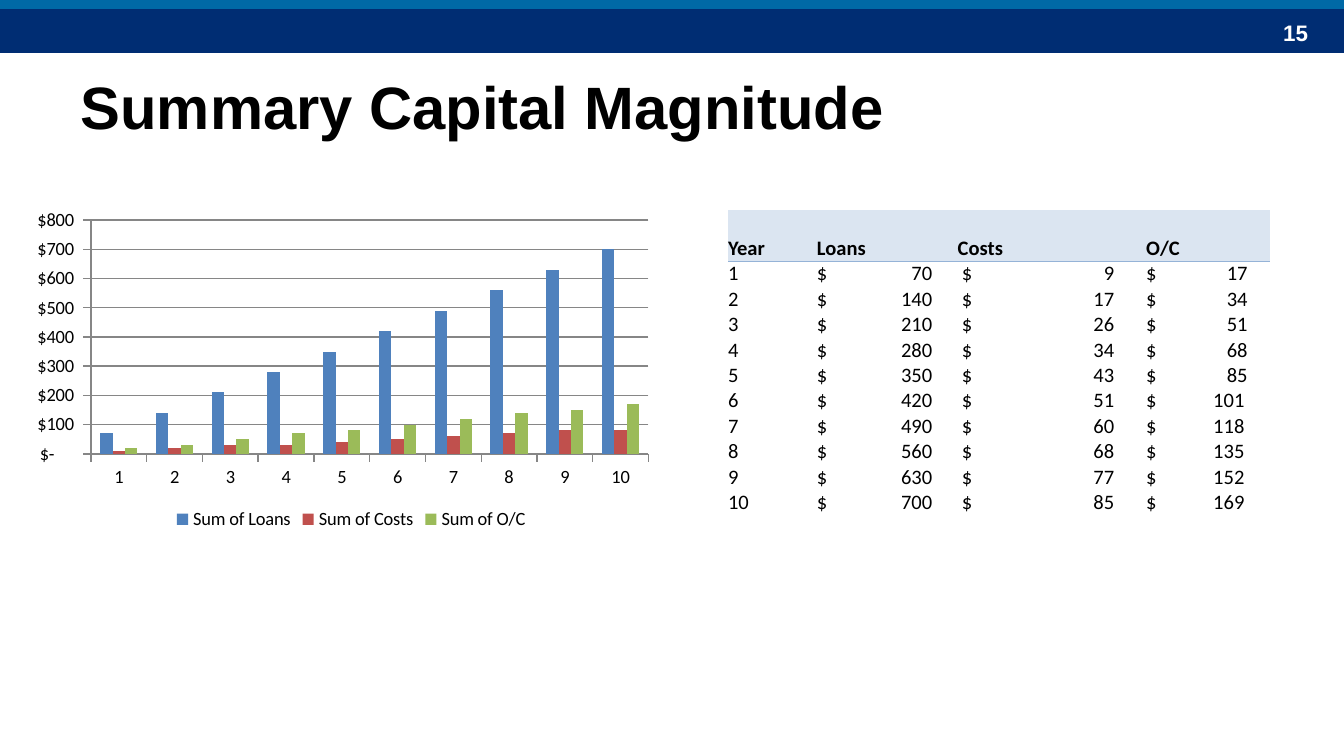
from lxml.etree import SubElement
from pptx import Presentation
from pptx.chart.data import CategoryChartData
from pptx.dml.color import RGBColor
from pptx.enum.chart import XL_CHART_TYPE as ChartType, XL_LEGEND_POSITION as LegendPosition, XL_TICK_MARK as TickMark
from pptx.enum.shapes import MSO_SHAPE as ShapeType
from pptx.enum.text import MSO_ANCHOR as Anchor, PP_ALIGN as Align
from pptx.oxml import parse_xml
from pptx.oxml.ns import nsdecls, qn
from pptx.util import Cm, Pt

YEARS = range(1, 11)
AMOUNTS = {
    "Loans": [70, 140, 210, 280, 350, 420, 490, 560, 630, 700],
    "Costs": [9, 17, 26, 34, 43, 51, 60, 68, 77, 85],
    "O/C": [17, 34, 51, 68, 85, 101, 118, 135, 152, 169],
}
SERIES_COLORS = ["4F81BD", "C0504D", "9BBB59"]
COLUMN_WIDTHS = [1.6, 2.74, 3.48, 2.42]
AMOUNT_TABS = {"Loans": 2.18, "Costs": 2.88, "O/C": 1.92}
WIDE_OC_TAB = 1.86
ROW_HEIGHT = 0.48
INDENT = 0.08
NO_STYLE = "{2D5ABB26-0587-4C30-8999-92F81FD0307C}"
DOLLARS = '_("$"* #,##0_);_("$"* \\(#,##0\\);_("$"* "-"??_);_(@_)'

TITLE_FONT = {"name": "Arial", "size": Pt(32), "bold": True}
NUMBER_FONT = {"name": "Arial", "size": Pt(12), "bold": True}
HEADER_FONT = {"name": "Calibri", "size": Pt(11), "bold": True}
BODY_FONT = {**HEADER_FONT, "bold": False}
CHART_FONT = {"name": "Calibri", "size": Pt(10)}


def rgb(color):
    return RGBColor.from_string(color)


def apply_format(target, values):
    for name, value in values.items():
        setattr(target, name, value)


def format_font(font, values, color="000000"):
    apply_format(font, values)
    font.color.rgb = rgb(color)


def place(shape, left, top, width, height):
    box = {"left": left, "top": top, "width": width, "height": height}
    apply_format(shape, {name: Cm(value) for name, value in box.items()})


def add_band(slide, top, height, color):
    band = slide.shapes.add_shape(ShapeType.RECTANGLE, 0, Cm(top), Cm(25.4), Cm(height))
    band.shadow.inherit = False
    band.fill.solid()
    band.fill.fore_color.rgb = rgb(color)
    band.line.fill.background()


def add_slide_number(slide, number):
    box = slide.shapes.add_textbox(Cm(23.07), Cm(0.24), Cm(1.9), Cm(0.76))
    box.text_frame.word_wrap = True
    paragraph = box.text_frame.paragraphs[0]
    paragraph.alignment = Align.RIGHT
    run = paragraph.add_run()
    run.text = number
    format_font(run.font, NUMBER_FONT, "FFFFFF")


def set_title(slide, text):
    title = slide.shapes.title
    place(title, 1.27, 1.08, 22.86, 1.83)
    frame = title.text_frame
    apply_format(frame, {"text": text, "vertical_anchor": Anchor.MIDDLE, "word_wrap": True})
    paragraph = frame.paragraphs[0]
    paragraph.alignment = Align.LEFT
    format_font(paragraph.runs[0].font, TITLE_FONT)


def format_axis(axis):
    axis.major_tick_mark = TickMark.OUTSIDE
    axis.minor_tick_mark = TickMark.NONE
    axis.format.line.color.rgb = rgb("868686")
    format_font(axis.tick_labels.font, CHART_FONT)


def set_plot_area(chart, x, y, width, height):
    plot_area = chart._chartSpace.chart.plotArea
    for layout in plot_area.findall(qn("c:layout")):
        plot_area.remove(layout)
    layout = parse_xml(f"<c:layout {nsdecls('c')}><c:manualLayout/></c:layout>")
    settings = {"layoutTarget": "inner", "xMode": "edge", "yMode": "edge",
                "x": x, "y": y, "w": width, "h": height}
    for name, value in settings.items():
        SubElement(layout[0], qn(f"c:{name}")).set("val", str(value))
    plot_area.insert(0, layout)


def add_capital_chart(slide):
    data = CategoryChartData(number_format=DOLLARS)
    data.categories = [str(year) for year in YEARS]
    for name, amounts in AMOUNTS.items():
        data.add_series(f"Sum of {name}", [round(amount, -1) for amount in amounts])
    chart = slide.shapes.add_chart(
        ChartType.COLUMN_CLUSTERED, Cm(0.63), Cm(3.96), Cm(11.86), Cm(6.15), data).chart
    chart.has_title = False
    format_font(chart.font, CHART_FONT)
    chart.has_legend = True
    apply_format(chart.legend, {"position": LegendPosition.BOTTOM, "include_in_layout": False})
    format_font(chart.legend.font, CHART_FONT)
    plot = chart.plots[0]
    apply_format(plot, {"vary_by_categories": False, "gap_width": 150, "overlap": 0})
    for series, color in zip(plot.series, SERIES_COLORS):
        series.format.fill.solid()
        series.format.fill.fore_color.rgb = rgb(color)
    format_axis(chart.category_axis)
    axis = chart.value_axis
    format_axis(axis)
    apply_format(axis, {"minimum_scale": 0, "maximum_scale": 800, "major_unit": 100})
    axis.major_gridlines.format.line.color.rgb = rgb("868686")
    apply_format(axis.tick_labels, {"number_format": DOLLARS, "number_format_is_linked": False})
    set_plot_area(chart, 0.08, 0.03, 0.9, 0.72)


def add_bottom_border(cell):
    cell._tc.get_or_add_tcPr().insert(0, parse_xml(
        f'<a:lnB {nsdecls("a")} w="{Pt(0.5)}"><a:solidFill>'
        f'<a:srgbClr val="95B3D7"/></a:solidFill></a:lnB>'))


def fill_cell(cell, text, font, indent=0, tab=None, color=None):
    apply_format(cell, {"margin_left": Cm(indent), "margin_right": 0, "margin_top": 0,
                        "margin_bottom": 0, "vertical_anchor": Anchor.BOTTOM})
    paragraph = cell.text_frame.paragraphs[0]
    if tab:
        tabs = SubElement(paragraph._p.get_or_add_pPr(), qn("a:tabLst"))
        SubElement(tabs, qn("a:tab"), pos=str(Cm(tab)), algn="r")
    if text:
        run = paragraph.add_run()
        run.text = text
        format_font(run.font, font)
    else:
        SubElement(paragraph._p, qn("a:endParaRPr"), sz=str(int(font["size"].pt * 100)))
    if color:
        cell.fill.solid()
        cell.fill.fore_color.rgb = rgb(color)
    else:
        cell.fill.background()


def amount_tab(name, amount):
    return WIDE_OC_TAB if name == "O/C" and amount >= 100 else AMOUNT_TABS[name]


def add_capital_table(slide):
    row_count = len(YEARS) + 2
    table = slide.shapes.add_table(
        row_count, len(COLUMN_WIDTHS), Cm(13.76), Cm(3.97),
        Cm(sum(COLUMN_WIDTHS)), Cm(ROW_HEIGHT * row_count)).table
    apply_format(table, {"first_row": False, "horz_banding": False})
    table._tbl.tblPr.find(qn("a:tableStyleId")).text = NO_STYLE
    for column, width in zip(table.columns, COLUMN_WIDTHS):
        column.width = Cm(width)
    for row in table.rows:
        row.height = Cm(ROW_HEIGHT)
    for column, header in enumerate(["Year", *AMOUNTS]):
        indent = INDENT if header in ("Loans", "O/C") else 0
        fill_cell(table.cell(0, column), "", HEADER_FONT, color="DBE5F1")
        fill_cell(table.cell(1, column), header, HEADER_FONT, indent, color="DBE5F1")
        add_bottom_border(table.cell(1, column))
    for row, year in enumerate(YEARS, start=2):
        fill_cell(table.cell(row, 0), str(year), BODY_FONT)
        for column, (name, amounts) in enumerate(AMOUNTS.items(), start=1):
            amount = amounts[row - 2]
            fill_cell(table.cell(row, column), f"$\t{amount}", BODY_FONT,
                      INDENT, amount_tab(name, amount))


def main():
    presentation = Presentation()
    apply_format(presentation, {"slide_width": Cm(25.4), "slide_height": Cm(14.28)})
    slide = presentation.slides.add_slide(presentation.slide_layouts[5])
    add_band(slide, 0.17, 0.83, "002D73")
    add_slide_number(slide, "15")
    add_band(slide, -0.05, 0.22, "0069A6")
    set_title(slide, "Summary Capital Magnitude")
    add_capital_table(slide)
    add_capital_chart(slide)
    presentation.save("out.pptx")


if __name__ == "__main__":
    main()
